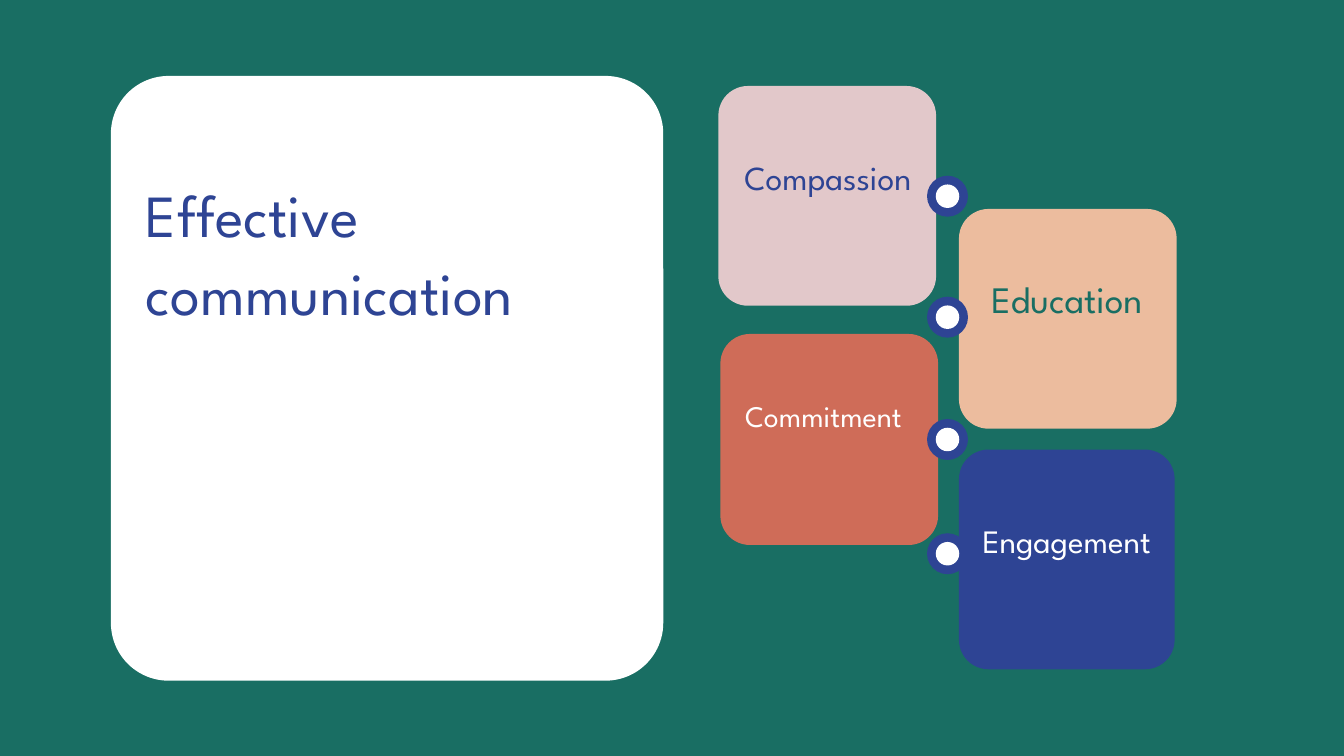
import dataclasses

import pptx
import pptx.dml.color
import pptx.enum.shapes
import pptx.enum.text
import pptx.util
from pptx.util import Inches


@dataclasses.dataclass(frozen=True)
class Theme:
    font: str = "League Spartan"
    green: str = "196E63"
    blue: str = "2E4494"
    pink: str = "E2C8CA"
    peach: str = "ECBC9E"
    coral: str = "CF6C58"
    white: str = "FFFFFF"
    title: int = 64
    education: int = 40
    compassion: int = 36
    engagement: int = 35
    commitment: int = 32
    leading: float = 1.3


THEME = Theme()
SHAPE = pptx.enum.shapes.MSO_SHAPE
ALIGN = pptx.enum.text.PP_ALIGN


def rgb(color):
    return pptx.dml.color.RGBColor.from_string(color)


def add_filled(s, kind, box, color):
    sp = s.shapes.add_shape(kind, *map(Inches, box))
    sp.shadow.inherit = False
    sp.fill.solid()
    sp.fill.fore_color.rgb = rgb(color)
    sp.line.fill.background()
    return sp


def add_card(s, box, color, radius):
    sp = add_filled(s, SHAPE.ROUNDED_RECTANGLE, box, color)
    sp.adjustments[0] = radius / min(box[2:])


def add_dot(s, x, y, diameter, color):
    box = (x - diameter / 2, y - diameter / 2, diameter, diameter)
    add_filled(s, SHAPE.OVAL, box, color)


def add_label(s, text, box, size, color, align=ALIGN.CENTER):
    tf = s.shapes.add_textbox(*map(Inches, box)).text_frame
    tf.word_wrap = True
    tf.margin_left = tf.margin_top = tf.margin_right = tf.margin_bottom = 0
    tf.text = text
    p = tf.paragraphs[0]
    p.alignment = align
    p.line_spacing = pptx.util.Pt(round(size * THEME.leading, 1))
    font = p.runs[0].font
    font.name = THEME.font
    font.size = pptx.util.Pt(size)
    font.color.rgb = rgb(color)


def main():
    """Build the effective communication slide."""
    t = THEME
    prs = pptx.Presentation()
    prs.slide_width, prs.slide_height = Inches(20), Inches(11.25)
    s = prs.slides.add_slide(prs.slide_layouts[6])
    s.background.fill.solid()
    s.background.fill.fore_color.rgb = rgb(t.green)

    cards = [
        ((14.27, 6.69, 3.21, 3.27), t.blue),
        ((10.69, 1.28, 3.24, 3.27), t.pink),
        ((14.27, 3.11, 3.24, 3.27), t.peach),
        ((10.72, 4.97, 3.24, 3.14), t.coral),
    ]
    for box, color in cards:
        add_card(s, box, color, 0.44)

    for y in (2.92, 4.72, 6.54, 8.24):
        add_dot(s, 14.1, y, 0.61, t.blue)
        add_dot(s, 14.1, y, 0.35, t.white)

    labels = [
        ("Compassion", (10.72, 2.28, 3.2, 0.63), t.compassion, t.blue),
        ("Commitment", (10.72, 5.87, 3.07, 0.56), t.commitment, t.white),
        ("Education", (14.27, 4.06, 3.21, 0.7), t.education, t.green),
        ("Engagement", (14.27, 7.7, 3.21, 0.61), t.engagement, t.white),
    ]
    for text, box, size, color in labels:
        add_label(s, text, box, size, color)

    add_card(s, (1.65, 1.13, 8.22, 9), t.white, 0.86)
    add_label(s, "Effective communication", (2.17, 2.56, 7.18, 2.33),
              t.title, t.blue, ALIGN.LEFT)
    prs.save("out.pptx")


if __name__ == "__main__":
    main()
